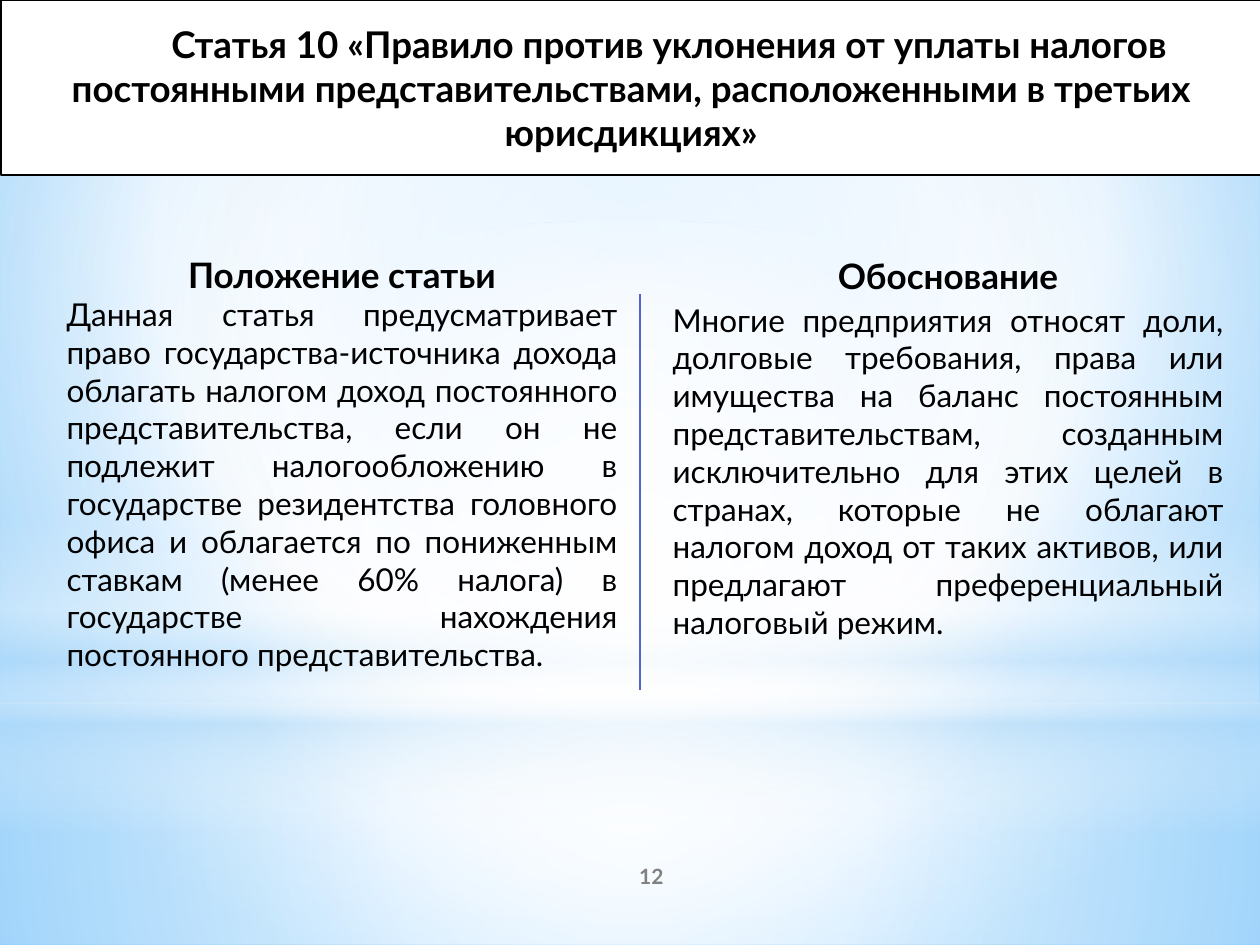
import pptx
import pptx.util
import pptx.dml.color
import pptx.enum.shapes
import pptx.enum.text
import pptx.oxml
import pptx.oxml.ns

WIDTH, HEIGHT = pptx.util.Inches(10), pptx.util.Inches(7.5)
FONT = "Lato"
WHITE, SKY, BLACK = "FFFFFF", "B4DCFA", "000000"
CENTER = pptx.enum.text.PP_ALIGN.CENTER
JUSTIFY = pptx.enum.text.PP_ALIGN.JUSTIFY
RECTANGLE = pptx.enum.shapes.MSO_SHAPE.RECTANGLE
OVAL = pptx.enum.shapes.MSO_SHAPE.OVAL


def color(value):
    return pptx.dml.color.RGBColor.from_string(value)


def area(left, top, width, height):
    """Turn percentages of the slide into lengths."""
    return (int(WIDTH * left / 100), int(HEIGHT * top / 100),
            int(WIDTH * width / 100), int(HEIGHT * height / 100))


def gradient(stops, focus=None):
    """Stops are (position, colour, opacity); focus gives a circular gradient."""
    stop_xml = "".join(
        f'<a:gs pos="{pos * 1000}"><a:srgbClr val="{tone}">'
        f'<a:alpha val="{opacity * 1000}"/></a:srgbClr></a:gs>'
        for pos, tone, opacity in stops)
    if focus:
        sides = " ".join(f'{side}="{share * 1000}"' for side, share in zip("ltrb", focus))
        direction = f'<a:path path="circle"><a:fillToRect {sides}/></a:path>'
    else:
        direction = '<a:lin ang="5400000" scaled="0"/>'
    return pptx.oxml.parse_xml(
        f'<a:gradFill {pptx.oxml.ns.nsdecls("a")} rotWithShape="1">'
        f'<a:gsLst>{stop_xml}</a:gsLst>{direction}</a:gradFill>')


def swap_gradient(fill, parent, new_gradient):
    fill.gradient()
    parent.replace(parent.find(pptx.oxml.ns.qn("a:gradFill")), new_gradient)


def add_glow(slide, kind, place, stops, focus=None):
    glow = slide.shapes.add_shape(kind, *area(*place))
    glow.shadow.inherit = False
    glow.line.fill.background()
    swap_gradient(glow.fill, glow._element.spPr, gradient(stops, focus))


def write(frame, text, first=False, size=18, bold=False, tone=BLACK,
          align=CENTER, before=0, indent=0):
    paragraph = frame.paragraphs[0] if first else frame.add_paragraph()
    paragraph.alignment = align
    paragraph.space_before = pptx.util.Pt(before)
    if indent:
        paragraph._p.get_or_add_pPr().set("indent", str(pptx.util.Inches(indent)))
    run = paragraph.add_run()
    run.text = text
    run.font.name = FONT
    run.font.size = pptx.util.Pt(size)
    run.font.bold = bold
    run.font.color.rgb = color(tone)


def prepare(frame):
    frame.word_wrap = True
    frame.vertical_anchor = pptx.enum.text.MSO_ANCHOR.MIDDLE
    return frame


def add_text_area(slide, place):
    return prepare(slide.shapes.add_textbox(*area(*place)).text_frame)


def add_column(slide, place, heading, body, before=0, bottom=0.05):
    frame = add_text_area(slide, place)
    frame.margin_bottom = pptx.util.Inches(bottom)
    write(frame, heading, first=True, size=20, bold=True, before=before)
    write(frame, body, align=JUSTIFY, before=before)


def add_title(slide, text):
    banner = slide.shapes.add_shape(RECTANGLE, *area(0.1, 0, 100, 18.53))
    banner.shadow.inherit = False
    banner.fill.solid()
    banner.fill.fore_color.rgb = color(WHITE)
    banner.line.color.rgb = color(BLACK)
    banner.line.width = pptx.util.Pt(1.25)
    write(prepare(banner.text_frame), text, first=True, size=21, bold=True, indent=0.6)


def add_divider(slide, x, top, bottom):
    left, start, _, end = area(x, top, 0, bottom)
    divider = slide.shapes.add_connector(
        pptx.enum.shapes.MSO_CONNECTOR.STRAIGHT, left, start, left, end)
    divider.line.color.rgb = color("4E67C8")
    divider.line.width = pptx.util.Pt(0.75)
    divider._element.spPr.append(
        pptx.oxml.parse_xml(f'<a:effectLst {pptx.oxml.ns.nsdecls("a")}/>'))


def add_backdrop(slide):
    fill = slide.background.fill
    fill.gradient()
    base = slide._element.cSld.bg.bgPr
    swap_gradient(fill, base, gradient(
        [(0, "9ED5FF", 100), (60, WHITE, 100), (100, "5BB9FF", 100)], (20, 10, 20, 60)))

    middle = (50, 50, 50, 50)
    # Floor and wall, meeting at the horizon
    horizon = 74.4
    add_glow(slide, RECTANGLE, (0, horizon, 100, 100 - horizon),
             [(0, WHITE, 91), (37, WHITE, 76), (100, SKY, 79)], middle)
    add_glow(slide, RECTANGLE, (0, 0, 100, horizon),
             [(0, WHITE, 89), (48, WHITE, 62), (100, SKY, 79)], middle)
    # Soft band across the horizon
    add_glow(slide, RECTANGLE, (0, 54.93, 100, 33.33),
             [(0, WHITE, 0), (29, WHITE, 30), (45, SKY, 40),
              (55, WHITE, 26), (65, SKY, 60), (100, WHITE, 0)])
    # Central light
    add_glow(slide, OVAL, (0, 23.33, 100, horizon),
             [(0, WHITE, 100), (56, WHITE, 0)], middle)


def main():
    deck = pptx.Presentation()
    deck.slide_width, deck.slide_height = WIDTH, HEIGHT
    slide = deck.slides.add_slide(deck.slide_layouts[6])

    add_backdrop(slide)
    add_title(slide, "Статья 10 «Правило против уклонения от уплаты налогов постоянными "
                     "представительствами, расположенными в третьих юрисдикциях»")

    # Provision and rationale, side by side
    add_column(slide, (4.3, 22.67, 45.7, 56.67), "Положение статьи",
               "Данная статья предусматривает право государства-источника дохода облагать "
               "налогом доход постоянного представительства, если он не подлежит "
               "налогообложению в государстве резидентства головного офиса и облагается по "
               "пониженным ставкам (менее 60% налога) в государстве нахождения постоянного "
               "представительства.", bottom=0.35)
    add_column(slide, (52.4, 18.53, 45.7, 57.73), "Обоснование",
               "Многие предприятия относят доли, долговые требования, права или имущества на "
               "баланс постоянным представительствам, созданным исключительно для этих целей "
               "в странах, которые не облагают налогом доход от таких активов, или предлагают "
               "преференциальный налоговый режим.", before=2)
    add_divider(slide, 50.8, 31.07, 73.07)

    # Page number
    write(add_text_area(slide, (41.7, 90, 20, 5.33)), "12",
          first=True, size=12, bold=True, tone="808080")

    deck.save("out.pptx")


if __name__ == "__main__":
    main()
